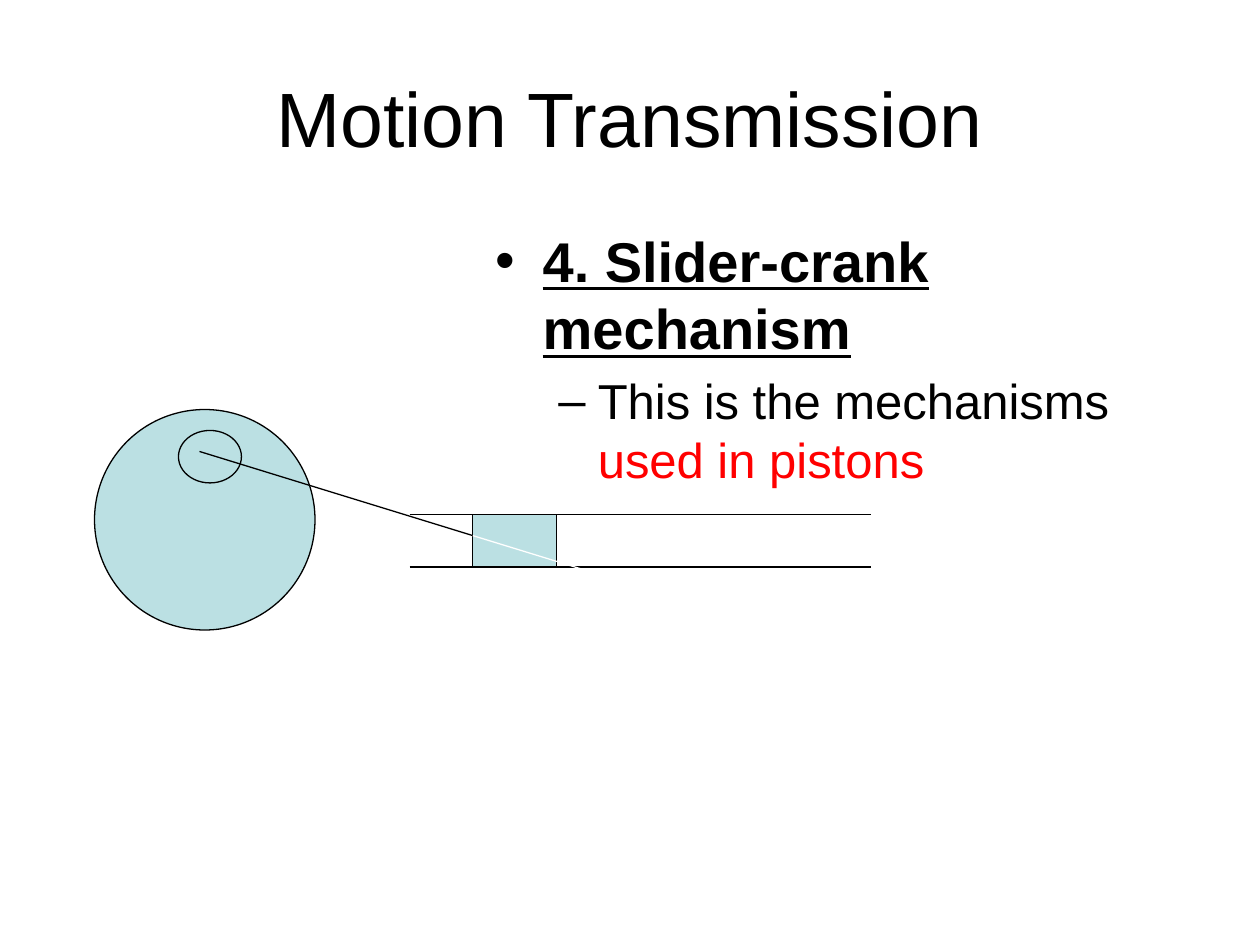
import pptx
import pptx.dml.color
import pptx.enum.shapes
import pptx.enum.text
import pptx.oxml.ns
import pptx.util
import lxml.etree

Pt = pptx.util.Pt
SHAPES = pptx.enum.shapes.MSO_SHAPE
COLOURS = {"black": "000000", "white": "FFFFFF", "red": "FF0000", "metal": "BBE0E3"}


def colour(name):
    return pptx.dml.color.RGBColor.from_string(COLOURS[name])


def place(shape, left, top, width, height):
    shape.left, shape.top = Pt(left), Pt(top)
    shape.width, shape.height = Pt(width), Pt(height)


def add_text(paragraph, text, size, ink="black", bold=False, underline=False):
    span = paragraph.add_run()
    span.text = text
    font = span.font
    font.name, font.size = "Arial", Pt(size)
    font.bold, font.underline = bold, underline
    font.color.rgb = colour(ink)


def add_element(parent, tag, **attributes):
    lxml.etree.SubElement(parent, pptx.oxml.ns.qn(tag), attributes)


def set_bullet(paragraph, symbol, margin, hanging, space):
    paragraph.space_before = Pt(space)
    properties = paragraph._p.get_or_add_pPr()
    properties.set("marL", str(int(Pt(margin))))
    properties.set("indent", str(-int(Pt(hanging))))
    add_element(properties, "a:buFont", typeface="Arial")
    add_element(properties, "a:buChar", char=symbol)


def add_part(page, kind, left, top, width, height):
    """Add a filled, outlined part of the mechanism."""
    part = page.shapes.add_shape(kind, Pt(left), Pt(top), Pt(width), Pt(height))
    part.shadow.inherit = False
    part.fill.solid()
    part.fill.fore_color.rgb = colour("metal")
    part.line.color.rgb = colour("black")
    part.line.width = Pt(0.75)


def add_line(page, start, end, ink="black"):
    line = page.shapes.add_connector(
        pptx.enum.shapes.MSO_CONNECTOR.STRAIGHT, *map(Pt, start + end))
    line.line.color.rgb = colour(ink)
    line.line.width = Pt(0.75)
    add_element(line._element.spPr, "a:effectLst")


def add_title(page, text):
    title = page.shapes.title
    place(title, 36, 21.6, 648, 90)
    title.text_frame.vertical_anchor = pptx.enum.text.MSO_ANCHOR.MIDDLE
    paragraph = title.text_frame.paragraphs[0]
    paragraph.alignment = pptx.enum.text.PP_ALIGN.CENTER
    add_text(paragraph, text, size=44)


def add_description(page):
    box = page.shapes.add_textbox(Pt(276), Pt(126), Pt(408), Pt(356.4))
    frame = box.text_frame
    frame.word_wrap = True
    heading = frame.paragraphs[0]
    set_bullet(heading, "•", margin=27, hanging=27, space=6.4)
    add_text(heading, "4. Slider-crank mechanism", size=32, bold=True, underline=True)
    detail = frame.add_paragraph()
    detail.level = 1
    set_bullet(detail, "–", margin=58.5, hanging=22.5, space=5.6)
    add_text(detail, "This is the mechanisms ", size=28)
    add_text(detail, "used in pistons", size=28, ink="red")


def add_mechanism(page):
    cylinder_top, cylinder_bottom = 294, 324
    add_part(page, SHAPES.RECTANGLE, 270, cylinder_top, 48, cylinder_bottom - cylinder_top)
    for y in (cylinder_bottom, cylinder_top):
        add_line(page, (234, y), (498, y))
    add_part(page, SHAPES.OVAL, 54, 234, 126, 126)
    add_part(page, SHAPES.OVAL, 102, 246, 36, 30)
    crank_pin, piston_joint, rod_end = (114, 258), (270, 306), (426, 354)
    add_line(page, piston_joint, rod_end, ink="white")
    add_line(page, crank_pin, piston_joint)


def main():
    deck = pptx.Presentation()
    deck.slide_width, deck.slide_height = Pt(720), Pt(540)
    page = deck.slides.add_slide(deck.slide_layouts[5])
    page.background.fill.solid()
    page.background.fill.fore_color.rgb = colour("white")
    add_title(page, "Motion Transmission")
    add_description(page)
    add_mechanism(page)
    deck.save("out.pptx")


if __name__ == "__main__":
    main()
